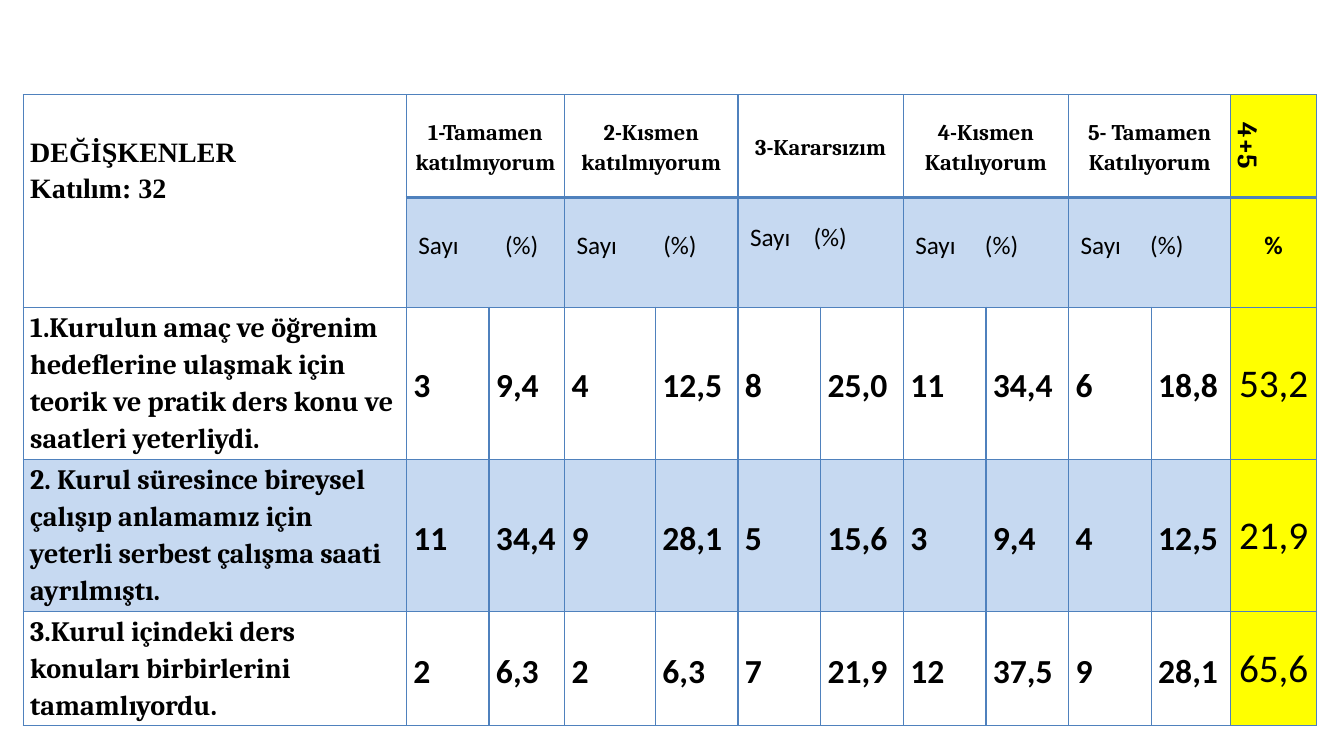
from dataclasses import dataclass
from lxml.etree import SubElement
from pptx import Presentation
from pptx.dml.color import RGBColor as RGB
from pptx.enum.text import MSO_ANCHOR as ANCHOR, PP_ALIGN as ALIGN
from pptx.oxml import parse_xml
from pptx.oxml.ns import nsdecls, qn
from pptx.util import Inches, Pt

TITLE = ["DEĞİŞKENLER", "Katılım: 32"]
SCALE = ["1-Tamamen katılmıyorum", "2-Kısmen katılmıyorum", "3-Kararsızım",
         "4-Kısmen Katılıyorum", "5- Tamamen Katılıyorum"]
COUNT, PERCENT = "Sayı", "(%)"
PERCENT_TABS = [0.86, 0.86, 0.63, 0.69, 0.69]
SUM_HEAD, SUM_UNIT = "4+5", "%"
QUESTIONS = [
    ("1.Kurulun amaç ve öğrenim hedeflerine ulaşmak için teorik ve pratik ders konu ve saatleri yeterliydi.",
     ["3", "9,4", "4", "12,5", "8", "25,0", "11", "34,4", "6", "18,8"], "53,2"),
    ("2. Kurul süresince bireysel çalışıp anlamamız için yeterli serbest çalışma saati ayrılmıştı.",
     ["11", "34,4", "9", "28,1", "5", "15,6", "3", "9,4", "4", "12,5"], "21,9"),
    ("3.Kurul içindeki ders konuları birbirlerini tamamlıyordu.",
     ["2", "6,3", "2", "6,3", "7", "21,9", "12", "37,5", "9", "28,1"], "65,6"),
]
COL_WIDTHS = [3.8, 0.82, 0.75, 0.9] + [0.82] * 6 + [0.79, 0.85]
ROW_HEIGHTS = [1.02, 1.06, 1.51, 1.51, 1.13]
LEFT, TOP = 0.23, 0.94


@dataclass(frozen=True)
class Theme:
    ink: str = "000000"
    line: str = "4F81BD"
    band: str = "C6D9F1"
    accent: str = "FFFF00"
    title_font: str = "Times New Roman"
    head_font: str = "Cambria"
    body_font: str = "Calibri"
    head: int = 16
    unit: int = 18
    text: int = 20
    value: int = 24
    total: int = 28
    thin: float = 1
    thick: float = 2.25


T = Theme()


def write(cell, lines, font, size, bold=True, align=ALIGN.LEFT, anchor=ANCHOR.MIDDLE,
          spacing=1.15, margins=(0.07, 0, 0.07, 0)):
    cell.margin_left, cell.margin_top, cell.margin_right, cell.margin_bottom = map(Inches, margins)
    cell.vertical_anchor = anchor
    tf = cell.text_frame
    for i, line in enumerate(lines):
        p = tf.add_paragraph() if i else tf.paragraphs[0]
        p.alignment, p.line_spacing = align, spacing
        r = p.add_run()
        r.text = line
        r.font.name, r.font.size, r.font.bold = font, Pt(size), bold
        r.font.color.rgb = RGB.from_string(T.ink)


def paint(cell, color):
    if color:
        cell.fill.solid()
        cell.fill.fore_color.rgb = RGB.from_string(color)
    else:
        cell.fill.background()


def outline(cell, widths):
    tc_pr = cell._tc.get_or_add_tcPr()
    for i, (side, width) in enumerate(zip("LRTB", widths)):
        tc_pr.insert(i, parse_xml(
            f'<a:ln{side} {nsdecls("a")} w="{Pt(width)}"><a:solidFill>'
            f'<a:srgbClr val="{T.line}"/></a:solidFill></a:ln{side}>'))


def add_tab(p, position):
    tabs = SubElement(p._p.get_or_add_pPr(), qn("a:tabLst"))
    SubElement(tabs, qn("a:tab"), pos=str(Inches(position)), algn="l")


def fill_heads(table):
    last = len(COL_WIDTHS) - 1
    table.cell(0, 0).merge(table.cell(1, 0))
    write(table.cell(0, 0), TITLE, T.title_font, T.text, anchor=ANCHOR.TOP,
          margins=(0.07, 0.38, 0.07, 0))
    for i, (label, tab) in enumerate(zip(SCALE, PERCENT_TABS)):
        col = 1 + 2 * i
        for row in (0, 1):
            table.cell(row, col).merge(table.cell(row, col + 1))
        write(table.cell(0, col), [label], T.head_font, T.head, align=ALIGN.CENTER)
        unit = table.cell(1, col)
        raised = 0.16 if label == SCALE[2] else 0
        write(unit, [f"{COUNT}\t{PERCENT}"], T.body_font, T.unit, bold=False,
              spacing=Pt(12), margins=(0.12, 0, 0.07, raised))
        add_tab(unit.text_frame.paragraphs[0], tab)
    write(table.cell(0, last), [SUM_HEAD], T.head_font, T.text, align=ALIGN.CENTER,
          anchor=ANCHOR.TOP)
    table.cell(0, last)._tc.get_or_add_tcPr().set("vert", "vert")
    write(table.cell(1, last), [SUM_UNIT], T.body_font, T.unit, align=ALIGN.CENTER,
          spacing=Pt(12))


def fill_questions(table):
    for row, (question, values, total) in enumerate(QUESTIONS, 2):
        write(table.cell(row, 0), [question], T.head_font, T.text, anchor=ANCHOR.TOP)
        for col, value in enumerate(values, 1):
            write(table.cell(row, col), [value], T.body_font, T.value)
        write(table.cell(row, len(values) + 1), [total], T.body_font, T.total, bold=False,
              align=ALIGN.CENTER, spacing=1.0, margins=(0.01, 0.01, 0.01, 0))


def style_cells(table):
    last = len(COL_WIDTHS) - 1
    for row in range(len(ROW_HEIGHTS)):
        for col in range(last + 1):
            cell = table.cell(row, col)
            banded = row == 3 or (row == 1 and col > 0)
            paint(cell, T.accent if col == last else T.band if banded else None)
            top = T.thick if row == 1 and col else T.thin
            bottom = T.thick if row == 0 and col else T.thin
            outline(cell, (T.thin, T.thin, top, bottom))


def main():
    prs = Presentation()
    prs.slide_width, prs.slide_height = Inches(13.33), Inches(7.5)
    s = prs.slides.add_slide(prs.slide_layouts[6])
    frame = s.shapes.add_table(len(ROW_HEIGHTS), len(COL_WIDTHS), Inches(LEFT), Inches(TOP),
                               Inches(sum(COL_WIDTHS)), Inches(sum(ROW_HEIGHTS)))
    table = frame.table
    table.first_row = table.horz_banding = False
    for column, width in zip(table.columns, COL_WIDTHS):
        column.width = Inches(width)
    for row, height in zip(table.rows, ROW_HEIGHTS):
        row.height = Inches(height)
    fill_heads(table)
    fill_questions(table)
    style_cells(table)
    prs.save("out.pptx")


if __name__ == "__main__":
    main()
